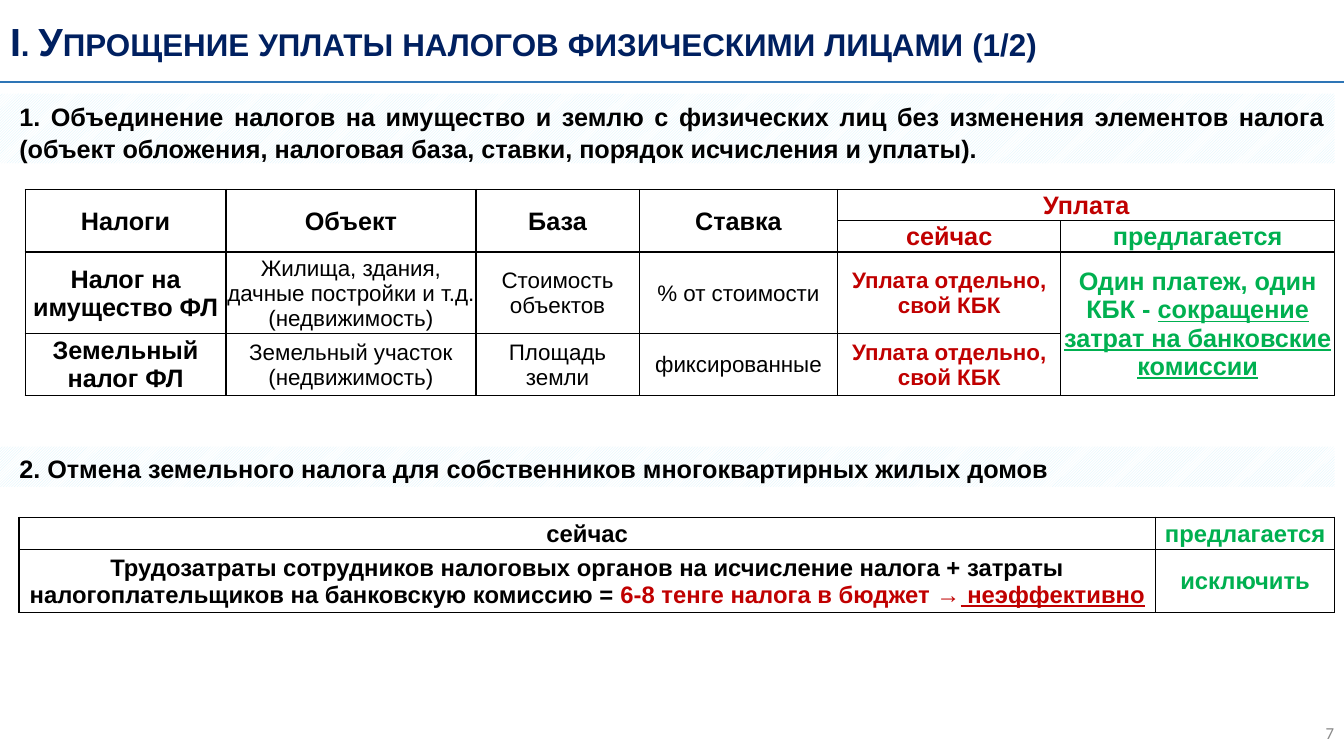
from pptx import Presentation
from pptx.dml.color import RGBColor as RGB
from pptx.enum.dml import MSO_PATTERN as PATTERN
from pptx.enum.shapes import MSO_CONNECTOR as CONN, MSO_SHAPE as SHAPE
from pptx.enum.text import MSO_ANCHOR as ANCHOR, MSO_AUTO_SIZE as FIT, PP_ALIGN as ALIGN
from pptx.oxml import parse_xml
from pptx.oxml.ns import nsdecls
from pptx.util import Inches, Pt

COLORS = {
    "navy": "002060", "rule": "2E75B6", "black": "000000", "white": "FFFFFF",
    "red": "C00000", "green": "00B050", "gray": "898989", "ice": "D5F2FC",
}


def rgb(name):
    return RGB.from_string(COLORS[name])


def run(text, **style):
    return text, style


def border(side):
    return parse_xml(
        f'<a:{side} {nsdecls("a")} w="12700"><a:solidFill>'
        f'<a:srgbClr val="{COLORS["black"]}"/></a:solidFill></a:{side}>'
    )


class Deck:
    """Builds the slide on a grid of 100 columns by 100 rows."""

    font = "Arial"

    def __init__(self, width, height):
        self.prs = Presentation()
        self.prs.slide_width, self.prs.slide_height = Inches(width), Inches(height)
        self.s = self.prs.slides.add_slide(self.prs.slide_layouts[5])

    def x(self, col):
        return round(self.prs.slide_width * col / 100)

    def y(self, row):
        return round(self.prs.slide_height * row / 100)

    def box(self, col, row, cols, rows):
        return self.x(col), self.y(row), self.x(cols), self.y(rows)

    def put_runs(self, tf, runs, align=ALIGN.CENTER, spacing=None, after=0, **base):
        tf.word_wrap = True
        p = tf.paragraphs[0]
        p.alignment, p.space_after = align, Pt(after)
        if spacing:
            p.line_spacing = spacing
        for text, style in runs:
            look = {"size": 18, "bold": True, "color": "black", "font": self.font, **base, **style}
            r = p.add_run()
            r.text = text
            r.font.name, r.font.size = look["font"], Pt(look["size"])
            r.font.bold, r.font.underline = look["bold"], look.get("underline", False)
            r.font.color.rgb = rgb(look["color"])
            if look.get("small_caps"):
                r._r.get_or_add_rPr().set("cap", "small")

    def title(self, text, *area):
        sp = self.s.shapes.title
        sp.left, sp.top, sp.width, sp.height = self.box(*area)
        tf = sp.text_frame
        tf.vertical_anchor, tf.auto_size = ANCHOR.MIDDLE, FIT.NONE
        self.put_runs(tf, [run(text)], ALIGN.LEFT, size=28, color="navy", small_caps=True)

    def text(self, text, *area, anchor=ANCHOR.TOP, **style):
        tf = self.s.shapes.add_textbox(*self.box(*area)).text_frame
        tf.vertical_anchor = anchor
        self.put_runs(tf, [run(text)], **style)

    def rule(self, row):
        line = self.s.shapes.add_connector(CONN.STRAIGHT, 0, self.y(row), self.x(100), self.y(row))
        line.line.color.rgb, line.line.width = rgb("rule"), Pt(1.5)
        line._element.spPr.append(parse_xml(f'<a:effectLst {nsdecls("a")}/>'))

    def heading(self, text, row, band_rows, text_rows):
        sp = self.s.shapes.add_shape(SHAPE.RECTANGLE, *self.box(0, row, 99.3, band_rows))
        sp.shadow.inherit = False
        sp.line.fill.background()
        sp.fill.patterned()
        sp.fill.pattern = PATTERN.DARK_UPWARD_DIAGONAL
        sp.fill.fore_color.rgb, sp.fill.back_color.rgb = rgb("ice"), rgb("white")
        self.text(text, 0.7, row, 98.6, text_rows, align=ALIGN.JUSTIFY, spacing=1.07, after=6)

    def table(self, col, row, cols, rows, cells, merges=(), **base):
        area = self.box(col, row, sum(cols), sum(rows))
        tbl = self.s.shapes.add_table(len(rows), len(cols), *area).table
        tbl.first_row = tbl.horz_banding = False
        for column, width in zip(tbl.columns, cols):
            column.width = self.x(width)
        for line, height in zip(tbl.rows, rows):
            line.height = self.y(height)
        for first, last in merges:
            tbl.cell(*first).merge(tbl.cell(*last))
        for i, line in enumerate(cells):
            for j, runs in enumerate(line):
                self.cell(tbl.cell(i, j), runs, **base)

    def cell(self, cell, runs, **base):
        cell.margin_left = cell.margin_right = cell.margin_top = Inches(0.01)
        cell.margin_bottom = 0
        cell.vertical_anchor = ANCHOR.MIDDLE
        tcPr = cell._tc.get_or_add_tcPr()
        for side in ("lnL", "lnR", "lnT", "lnB"):
            tcPr.append(border(side))
        cell.fill.solid()
        cell.fill.fore_color.rgb = rgb("white")
        self.put_runs(cell.text_frame, runs, **base)


def plain(text):
    return [run(text, size=16, bold=False)]


def main():
    deck = Deck(13.33, 7.5)
    deck.text("7", 77.5, 94.27, 22.5, 5.33, anchor=ANCHOR.MIDDLE, align=ALIGN.RIGHT,
              size=12, bold=False, color="gray", font="Calibri")
    deck.title("I. Упрощение уплаты налогов физическими лицами (1/2)", 0, 0, 100.4, 10.8)
    deck.rule(10.8)

    now = [run("сейчас", color="red")]
    proposed = [run("предлагается", color="green")]
    separate = [run("Уплата отдельно, свой КБК", size=16, color="red")]
    single = [
        run("Один платеж, один КБК - ", color="green"),
        run("сокращение затрат на банковские комиссии", color="green", underline=True),
    ]
    heads = [[run(name)] for name in ("Налоги", "Объект", "База", "Ставка")]
    deck.table(
        1.88, 25.07, [14.93, 18.6, 12.15, 14.78, 16.58, 20.4], [4.13, 4.13, 10.8, 8.13],
        [
            heads + [[run("Уплата", color="red")], []],
            [[]] * 4 + [now, proposed],
            [[run("Налог на имущество ФЛ")],
             plain("Жилища, здания, дачные постройки и т.д. (недвижимость)"),
             plain("Стоимость объектов"), plain("% от стоимости"), separate, single],
            [[run("Земельный налог ФЛ")], plain("Земельный участок (недвижимость)"),
             plain("Площадь земли"), plain("фиксированные"), separate, []],
        ],
        [((0, j), (1, j)) for j in range(4)] + [((0, 4), (0, 5)), ((2, 5), (3, 5))],
    )

    deck.heading("1. Объединение налогов на имущество и землю с физических лиц без изменения "
                 "элементов налога (объект обложения, налоговая база, ставки, порядок "
                 "исчисления и уплаты).", 12.4, 9.2, 10.8)
    deck.heading("2. Отмена земельного налога для собственников многоквартирных жилых домов",
                 59.07, 5.33, 5.33)

    costs = [
        run("Трудозатраты сотрудников налоговых органов на исчисление налога + затраты "
            "налогоплательщиков на банковскую комиссию = "),
        run("6-8 тенге налога в бюджет →", color="red"),
        run(" неэффективно", color="red", underline=True),
    ]
    deck.table(
        1.42, 68.4, [84.55, 13.35], [4.27, 8.4],
        [[[run("сейчас")], proposed], [costs, [run("исключить", color="green")]]],
        size=17,
    )
    deck.prs.save("out.pptx")


if __name__ == "__main__":
    main()
